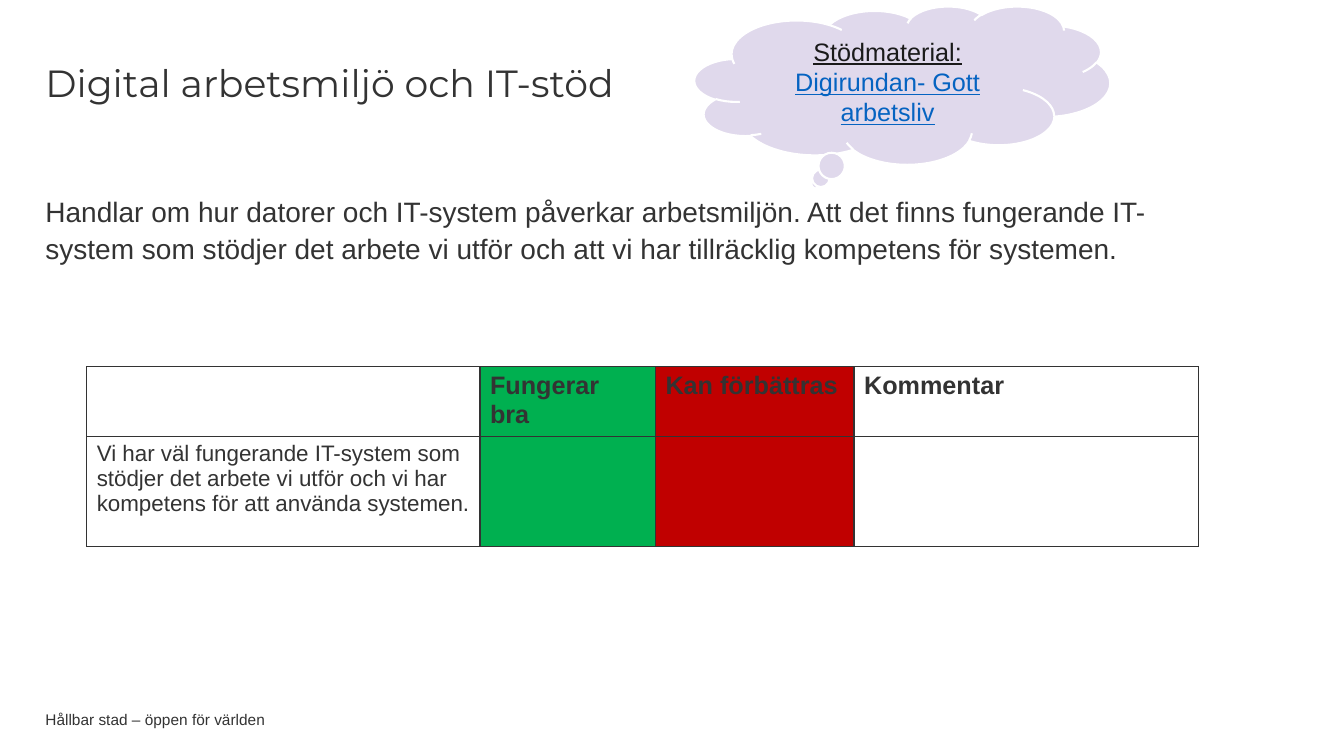
from lxml import etree
from pptx import Presentation
from pptx.dml.color import RGBColor
from pptx.enum.shapes import MSO_SHAPE
from pptx.enum.text import MSO_ANCHOR, MSO_AUTO_SIZE, PP_ALIGN
from pptx.oxml.ns import qn
from pptx.util import Inches, Pt

CLOUD = MSO_SHAPE.CLOUD_CALLOUT
MIDDLE, TOP = MSO_ANCHOR.MIDDLE, MSO_ANCHOR.TOP
LEFT, CENTER = PP_ALIGN.LEFT, PP_ALIGN.CENTER
FIXED = MSO_AUTO_SIZE.NONE

COLORS = {
    "text": "333333", "dark": "1A1A1A", "link": "0563C1", "cloud": "E0D9EC",
    "white": "FFFFFF", "good": "00B050", "bad": "C00000",
}
TITLE = "Digital arbetsmiljö och IT-stöd"
BODY = ("Handlar om hur datorer och IT-system påverkar arbetsmiljön. "
        "Att det finns fungerande IT-system som stödjer det arbete vi utför "
        "och att vi har tillräcklig kompetens för systemen.")
FOOTER = "Hållbar stad – öppen för världen"
HINTS = [("Stödmaterial:", "dark"), ("Digirundan- Gott arbetsliv", "link")]
ROWS = [
    ["", "Fungerar bra", "Kan förbättras", "Kommentar"],
    ["Vi har väl fungerande IT-system som stödjer det arbete vi utför "
     "och vi har kompetens för att använda systemen.", "", "", ""],
]
FILLS = [None, "good", "bad", None]

# percent of the slide: left, top, width, height
AREAS = {
    "title": (3.38, 5.87, 75.24, 10.8),
    "body": (3.38, 25.33, 86.35, 60.93),
    "footer": (3.38, 94.13, 70.89, 2.13),
    "table": (6.45, 48.53, 82.75, 23.73),
    "cloud": (51.69, 0.8, 30.91, 20.93),
}
COLS = [35.36, 15.78, 17.86, 31]
TALL = [38.77, 61.23]

deck = Presentation()
deck.slide_width, deck.slide_height = Inches(13.33), Inches(7.5)
slide = deck.slides.add_slide(deck.slide_layouts[1])


def color(name):
    return RGBColor.from_string(COLORS[name])


def area(name):
    sides = (deck.slide_width, deck.slide_height) * 2
    return [int(side * part / 100) for side, part in zip(sides, AREAS[name])]


def style(para, size, tint="text", face="Arial", bold=False):
    font = para.font
    font.name, font.size, font.bold = face, Pt(size), bold
    font.color.rgb = color(tint)


def write(shape, name, text, size, anchor, face="Arial", pad=0):
    shape.left, shape.top, shape.width, shape.height = area(name)
    frame = shape.text_frame
    frame.text = text
    frame.word_wrap, frame.auto_size = True, FIXED
    frame.vertical_anchor = anchor
    frame.margin_left = frame.margin_right = 0
    frame.margin_top = frame.margin_bottom = Inches(pad)
    para = frame.paragraphs[0]
    para.alignment = LEFT
    style(para, size, face=face)
    return para


def border(cell):
    props = cell._tc.get_or_add_tcPr()
    for edge in ("a:lnL", "a:lnR", "a:lnT", "a:lnB"):
        line = etree.SubElement(props, qn(edge), w=str(Pt(1)))
        fill = etree.SubElement(line, qn("a:solidFill"))
        etree.SubElement(fill, qn("a:srgbClr"), val=COLORS["text"])


head = write(slide.shapes.title, "title", TITLE, 27, MIDDLE, "Montserrat", 0.05)
head.line_spacing = 0.9

lead = write(slide.placeholders[1], "body", BODY, 20, TOP)
props = lead._p.get_or_add_pPr()
props.set("marL", "0")
props.set("indent", "0")
etree.SubElement(props, qn("a:buNone"))
lead.line_spacing = 1.1
lead.space_before, lead.space_after = Pt(0), Pt(3)
style(lead, 20)

write(slide.shapes.add_textbox(*area("footer")), "footer", FOOTER, 11, MIDDLE)

table = slide.shapes.add_table(len(ROWS), len(COLS), *area("table")).table
table.first_row = table.horz_banding = False
wide, high = area("table")[2:]
for col, share in zip(table.columns, COLS):
    col.width = int(wide * share / 100)
for row, share in zip(table.rows, TALL):
    row.height = int(high * share / 100)
for r, texts in enumerate(ROWS):
    for c, text in enumerate(texts):
        cell = table.cell(r, c)
        cell.text = text
        style(cell.text_frame.paragraphs[0], 16 if r else 18, bold=r == 0)
        border(cell)
        if FILLS[c]:
            cell.fill.solid()
            cell.fill.fore_color.rgb = color(FILLS[c])
        else:
            cell.fill.background()

cloud = slide.shapes.add_shape(CLOUD, *area("cloud"))
cloud.shadow.inherit = False
cloud.fill.solid()
cloud.fill.fore_color.rgb = color("cloud")
cloud.line.color.rgb = color("white")
cloud.line.width = Pt(1.5)
frame = cloud.text_frame
frame.word_wrap, frame.vertical_anchor = True, MIDDLE
frame.text = "\n".join(text for text, tint in HINTS)
for para, (text, tint) in zip(frame.paragraphs, HINTS):
    para.alignment = CENTER
    style(para, 18, tint)
    para.font.underline = True

deck.save("out.pptx")
